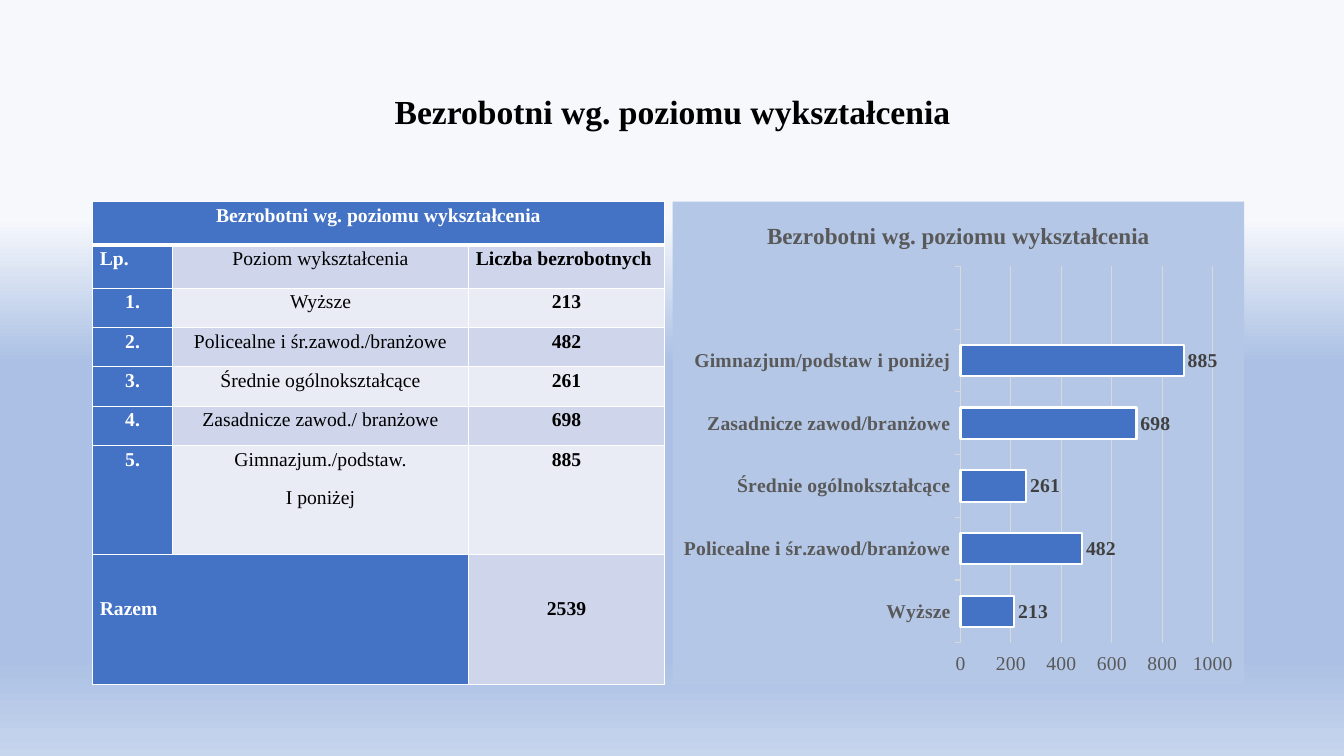
from pptx import Presentation
from pptx import util as u
from pptx.chart.data import CategoryChartData
from pptx.dml.color import RGBColor
from pptx.enum import chart as charts, text
from pptx.oxml import parse_xml
from pptx.oxml.ns import nsdecls, qn

HEADING = "Bezrobotni wg. poziomu wykształcenia"
FONT = "Times New Roman"
BLUE, WHITE, BLACK = "4472C4", "FFFFFF", "000000"
BANDS = ["E9EBF5", "CFD5EA"]
GRADIENT = [(29, "F6F8FC"), (48, "ABC0E4"), (87, "ABC0E4"), (100, "C7D5ED")]
COLUMNS = [0.79, 2.94, 1.94]
HEIGHTS = [0.43, 0.43, 0.39, 0.39, 0.39, 0.39, 1.08, 1.29]
ROWS = [
    (HEADING, "", ""),
    ("Lp.", "Poziom wykształcenia", "Liczba bezrobotnych"),
    ("1.", "Wyższe", "213"),
    ("2.", "Policealne i śr.zawod./branżowe", "482"),
    ("3.", "Średnie ogólnokształcące", "261"),
    ("4.", "Zasadnicze zawod./ branżowe", "698"),
    ("5.", "Gimnazjum./podstaw.\nI poniżej", "885"),
    ("Razem", "", "2539"),
]
JUSTIFIED = {"Lp.", "Liczba bezrobotnych", "Razem"}
BARS = [
    ("Wyższe", 213),
    ("Policealne i śr.zawod/branżowe", 482),
    ("Średnie ogólnokształcące", 261),
    ("Zasadnicze zawod/branżowe", 698),
    ("Gimnazjum/podstaw i poniżej", 885),
    ("", None),
]
TOP, HEIGHT, WIDTH = 2, 4.79, 5.67


def rgb(value):
    return RGBColor.from_string(value)


def style(font, size=14, color=BLACK, bold=False):
    font.name, font.size, font.bold = FONT, u.Pt(size), bold
    font.color.rgb = rgb(color)


def write(frame, content, align="CENTER", spacing=1.15, after=0, **look):
    frame.text = content
    for para in frame.paragraphs:
        para.alignment = getattr(text.PP_ALIGN, align)
        para.line_spacing, para.space_after = spacing, u.Pt(after)
        for span in para.runs:
            style(span.font, **look)


def solid(color):
    return f'<a:solidFill {nsdecls("a")}><a:srgbClr val="{color}"/></a:solidFill>'


def add_borders(cell, **widths):
    properties = cell._tc.get_or_add_tcPr()
    for index, side in enumerate("LRTB"):
        width = u.Pt(widths.get(side, 1))
        properties.insert(index, parse_xml(
            f'<a:ln{side} {nsdecls("a")} w="{width}">{solid(WHITE)}</a:ln{side}>'))


def paint_background(page):
    page.background.fill.gradient()
    page.background.fill.gradient_angle = 270
    stops = page.element.find(".//" + qn("a:gsLst"))
    for stop in list(stops):
        stops.remove(stop)
    for position, color in GRADIENT:
        stops.append(parse_xml(
            f'<a:gs {nsdecls("a")} pos="{position * 1000}"><a:srgbClr val="{color}"/></a:gs>'))


def add_title(page):
    title = page.shapes.title
    title.left, title.top = u.Inches(0.92), u.Inches(0.4)
    title.width, title.height = u.Inches(11.5), u.Inches(1.45)
    title.text_frame.vertical_anchor = text.MSO_ANCHOR.MIDDLE
    write(title.text_frame, HEADING, spacing=0.9, size=24, bold=True)


def add_summary_table(page):
    table = page.shapes.add_table(
        len(ROWS), len(COLUMNS), u.Inches(0.92), u.Inches(TOP),
        u.Inches(WIDTH), u.Inches(HEIGHT)).table
    for column, width in zip(table.columns, COLUMNS):
        column.width = u.Inches(width)
    last = len(ROWS) - 1
    for r, (row, values) in enumerate(zip(table.rows, ROWS)):
        row.height = u.Inches(HEIGHTS[r])
        for c, value in enumerate(values):
            cell = table.cell(r, c)
            cell.margin_left = cell.margin_right = u.Inches(0.07)
            cell.margin_top = u.Inches(0.4 if r == last else 0)
            cell.margin_bottom = 0
            dark = r == 0 or c == 0
            add_borders(cell, B=3 if r == 0 else 1, T=3 if r == 1 else 1)
            cell.fill.solid()
            cell.fill.fore_color.rgb = rgb(BLUE if dark else BANDS[r % 2])
            if value:
                write(cell.text_frame, value, "JUSTIFY" if value in JUSTIFIED else "CENTER",
                      after=10, color=WHITE if dark else BLACK, bold=dark or c == 2)
    table.cell(0, 0).merge(table.cell(0, 2))
    table.cell(last, 0).merge(table.cell(last, 1))


def add_bar_chart(page):
    data = CategoryChartData()
    data.categories = [name for name, _ in BARS]
    data.add_series("Liczba bezrobotnych", [value for _, value in BARS])
    chart = page.shapes.add_chart(
        charts.XL_CHART_TYPE.BAR_CLUSTERED, u.Inches(6.67), u.Inches(TOP),
        u.Inches(WIDTH), u.Inches(HEIGHT), data).chart
    style(chart.font)
    chart.has_legend = False
    chart.has_title = True
    write(chart.chart_title.text_frame, HEADING, spacing=1, size=16.5, color="595959", bold=True)
    chart.chart_title.include_in_layout = False
    chart.element.find(qn("c:chart")).addnext(parse_xml(
        f'<c:spPr {nsdecls("c", "a")}>{solid("B4C7E7")}<a:ln><a:noFill/></a:ln></c:spPr>'))

    for axis, bold in ((chart.category_axis, True), (chart.value_axis, False)):
        style(axis.tick_labels.font, color="595959", bold=bold)
        axis.major_tick_mark = charts.XL_TICK_MARK.OUTSIDE
    line = chart.category_axis.format.line
    line.color.rgb, line.width = rgb("D9D9D9"), u.Pt(0.75)
    scale = chart.value_axis
    scale.minimum_scale, scale.maximum_scale, scale.major_unit = 0, 1000, 200
    scale.format.line.fill.background()
    grid = scale.major_gridlines.format.line
    grid.color.rgb, grid.width = rgb("D9D9D9"), u.Pt(0.75)

    plot = chart.plots[0]
    plot.gap_width, plot.vary_by_categories = 100, False
    series = plot.series[0]
    series.format.fill.solid()
    series.format.fill.fore_color.rgb = rgb(BLUE)
    series.format.line.color.rgb = rgb(WHITE)
    series.format.line.width = u.Pt(1.5)
    labels = series.data_labels
    labels.show_value = True
    labels.position = charts.XL_LABEL_POSITION.OUTSIDE_END
    style(labels.font, color="404040", bold=True)


def main():
    deck = Presentation()
    deck.slide_width, deck.slide_height = u.Inches(13.33), u.Inches(7.5)
    page = deck.slides.add_slide(deck.slide_layouts[5])
    paint_background(page)
    add_title(page)
    add_summary_table(page)
    add_bar_chart(page)
    deck.save("out.pptx")


if __name__ == "__main__":
    main()
